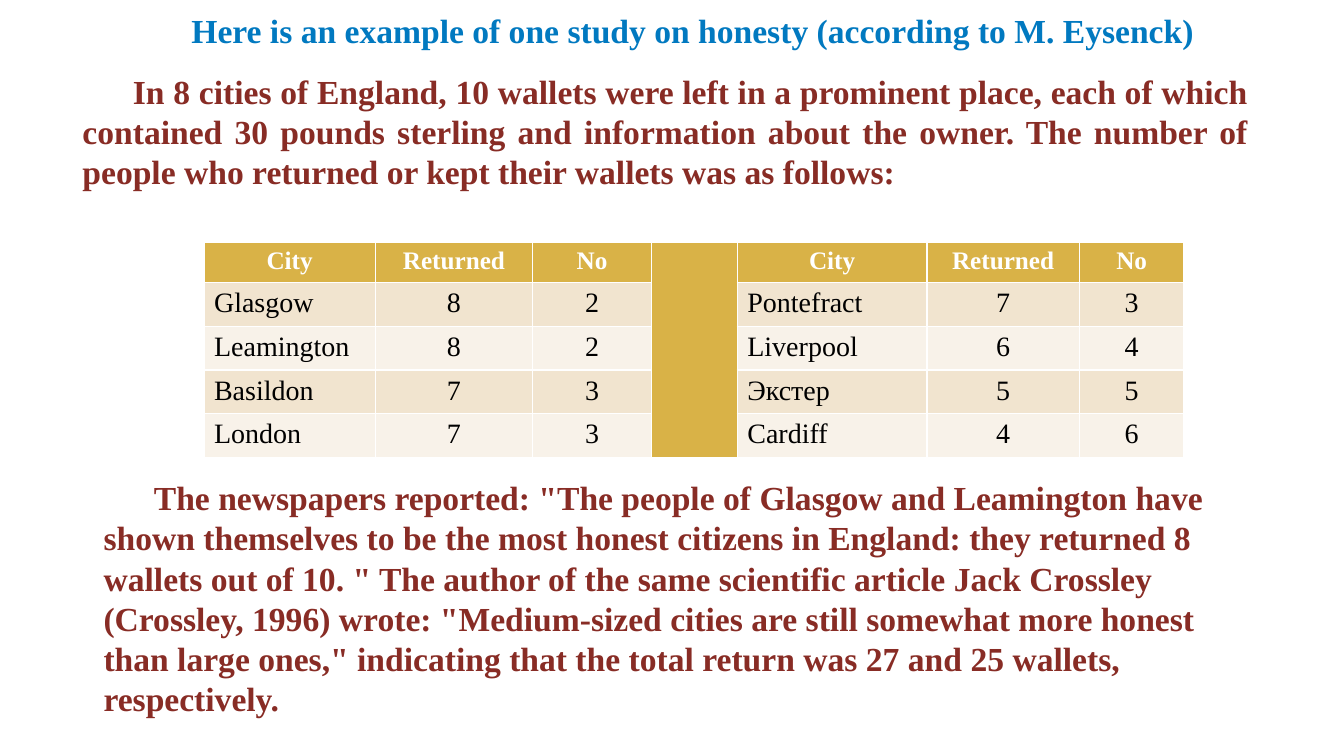
"""Build a slide on a wallet-return study of honesty in English cities."""
from pptx import Presentation
from pptx.dml.color import RGBColor
from pptx.enum.text import MSO_ANCHOR, PP_ALIGN
from pptx.util import Cm, Pt

LEFT, CENTER, JUSTIFY = PP_ALIGN.LEFT, PP_ALIGN.CENTER, PP_ALIGN.JUSTIFY
TOP = MSO_ANCHOR.TOP
TITLE_ONLY = 5
COLORS = {
    "title": "0179C0",
    "body": "882C25",
    "gold": "D9B247",
    "band_dark": "F1E4CF",
    "band_light": "F8F2E9",
    "white": "FFFFFF",
    "black": "000000",
}
PASSAGES = [
    ((1.83, 1.65, 29.87, 3.33), JUSTIFY,
     "In 8 cities of England, 10 wallets were left in a prominent place, each of which "
     "contained 30 pounds sterling and information about the owner. The number of people "
     "who returned or kept their wallets was as follows:"),
    ((2.36, 11.89, 29.72, 6.4), LEFT,
     'The newspapers reported: "The people of Glasgow and Leamington have shown themselves '
     'to be the most honest citizens in England: they returned 8 wallets out of 10. " The '
     'author of the same scientific article Jack Crossley (Crossley, 1996) wrote: '
     '"Medium-sized cities are still somewhat more honest than large ones," indicating that '
     'the total return was 27 and 25 wallets, respectively.'),
]
ROWS = [
    ("City", "Returned", "No", "", "City", "Returned", "No"),
    ("Glasgow", "8", "2", "", "Pontefract", "7", "3"),
    ("Leamington", "8", "2", "", "Liverpool", "6", "4"),
    ("Basildon", "7", "3", "", "Экстер", "5", "5"),
    ("London", "7", "3", "", "Cardiff", "4", "6"),
]
COLUMN_WIDTHS = [4.32, 3.96, 3, 2.16, 4.78, 3.84, 2.64]
HEADER_HEIGHT, ROW_HEIGHT = 1.02, 1.1
GAP_COLUMN = 3
CITY_COLUMNS = (0, 4)


def style_paragraph(paragraph, size, color, bold, alignment):
    paragraph.alignment = alignment
    paragraph.font.name = "Times New Roman"
    paragraph.font.size = Pt(size)
    paragraph.font.bold = bold
    paragraph.font.color.rgb = RGBColor.from_string(COLORS[color])


presentation = Presentation()
presentation.slide_width = Cm(33.87)
presentation.slide_height = Cm(19.05)
slide = presentation.slides.add_slide(presentation.slide_layouts[TITLE_ONLY])

title = slide.shapes.title
title.left, title.top, title.width, title.height = Cm(4.57), Cm(0.13), Cm(26.31), Cm(1.27)
title.text_frame.text = "Here is an example of one study on honesty (according to M. Eysenck)"
title.text_frame.word_wrap = False
title.text_frame.vertical_anchor = TOP
style_paragraph(title.text_frame.paragraphs[0], 24, "title", True, LEFT)

for box, alignment, text in PASSAGES:
    text_frame = slide.shapes.add_textbox(*map(Cm, box)).text_frame
    text_frame.word_wrap = True
    text_frame.text = text
    paragraph = text_frame.paragraphs[0]
    paragraph._p.get_or_add_pPr().set("indent", str(Cm(1.27)))
    style_paragraph(paragraph, 24, "body", True, alignment)

table_height = HEADER_HEIGHT + ROW_HEIGHT * (len(ROWS) - 1)
table = slide.shapes.add_table(
    len(ROWS), len(COLUMN_WIDTHS),
    Cm(5.14), Cm(6.1), Cm(sum(COLUMN_WIDTHS)), Cm(table_height),
).table
for column, width in zip(table.columns, COLUMN_WIDTHS):
    column.width = Cm(width)

for row_index, values in enumerate(ROWS):
    is_header = row_index == 0
    table.rows[row_index].height = Cm(HEADER_HEIGHT if is_header else ROW_HEIGHT)
    band = "band_dark" if row_index % 2 else "band_light"
    for column_index, value in enumerate(values):
        cell = table.cell(row_index, column_index)
        is_gold = is_header or column_index == GAP_COLUMN
        cell.fill.solid()
        cell.fill.fore_color.rgb = RGBColor.from_string(COLORS["gold" if is_gold else band])
        cell.text = value
        is_city = column_index in CITY_COLUMNS and not is_header
        style_paragraph(
            cell.text_frame.paragraphs[0],
            18 if is_header else 20,
            "white" if is_header else "black",
            is_header,
            LEFT if is_city else CENTER,
        )
table.cell(0, GAP_COLUMN).merge(table.cell(len(ROWS) - 1, GAP_COLUMN))

presentation.save("out.pptx")
